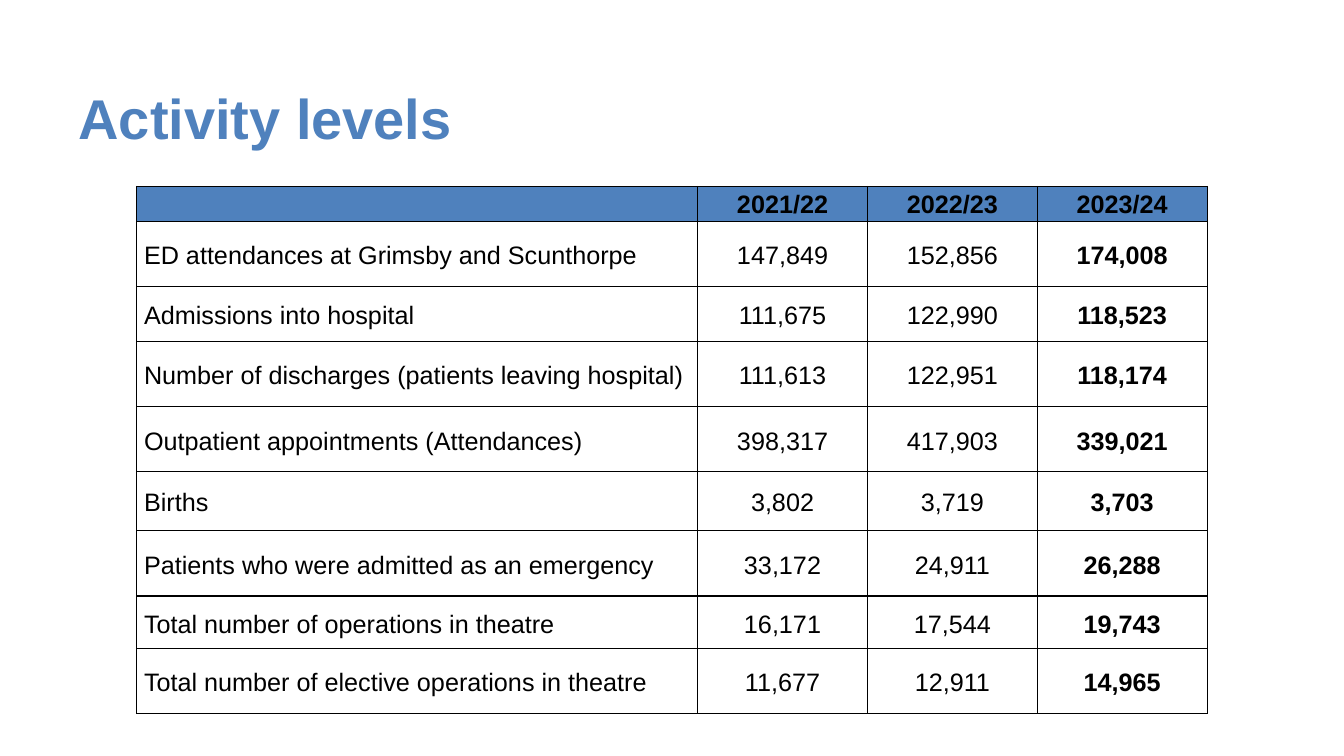
from lxml.etree import SubElement as Sub
from pptx import Presentation as Deck
from pptx.dml.color import RGBColor as RGB
from pptx.enum.text import MSO_ANCHOR as Anchor, PP_ALIGN as Align
from pptx.oxml.ns import qn
from pptx.util import Cm, Pt

BLUE = RGB(0x4F, 0x81, 0xBD)
BLACK = RGB(0, 0, 0)

HEAD = ["", "2021/22", "2022/23", "2023/24"]
ROWS = [
    ["ED attendances at Grimsby and Scunthorpe", "147,849", "152,856", "174,008"],
    ["Admissions into hospital", "111,675", "122,990", "118,523"],
    ["Number of discharges (patients leaving hospital)", "111,613", "122,951", "118,174"],
    ["Outpatient appointments (Attendances)", "398,317", "417,903", "339,021"],
    ["Births", "3,802", "3,719", "3,703"],
    ["Patients who were admitted as an emergency", "33,172", "24,911", "26,288"],
    ["Total number of operations in theatre", "16,171", "17,544", "19,743"],
    ["Total number of elective operations in theatre", "11,677", "12,911", "14,965"],
]
WIDTHS = [14.13, 4.28, 4.28, 4.28]
HEIGHTS = [0.8, 1.65, 1.37, 1.65, 1.64, 1.48, 1.65, 1.32, 1.65]


def write(frame, text, font="Arial", size=18, color=BLACK, bold=False,
          align=Align.LEFT, line=None, after=None):
    para = frame.paragraphs[0]
    para.alignment = align
    if line:
        para.line_spacing = line
    if after:
        para.space_after = Pt(after)
    run = para.add_run()
    run.text = text
    run.font.name = font
    run.font.size = Pt(size)
    run.font.bold = bold
    run.font.color.rgb = color


class Page:
    def __init__(self, slide, accent=BLUE, ink=BLACK):
        self.slide = slide
        self.accent = accent
        self.ink = ink

    def title(self, text, left, top, width, height):
        box = self.slide.shapes.add_textbox(Cm(left), Cm(top), Cm(width), Cm(height))
        frame = box.text_frame
        frame.word_wrap = True
        frame.vertical_anchor = Anchor.MIDDLE
        write(frame, text, size=40, color=self.accent, bold=True)

    def border(self, cell):
        props = cell._tc.get_or_add_tcPr()
        for side in ("lnL", "lnR", "lnT", "lnB"):
            edge = Sub(props, qn("a:" + side), w=str(Pt(1)))
            fill = Sub(edge, qn("a:solidFill"))
            Sub(fill, qn("a:srgbClr"), val=str(self.ink))

    def cell(self, cell, text, head, first, last):
        self.border(cell)
        cell.margin_left = cell.margin_right = Cm(0.18)
        cell.margin_top = cell.margin_bottom = 0
        cell.vertical_anchor = Anchor.TOP if head else Anchor.MIDDLE
        if head:
            cell.fill.solid()
            cell.fill.fore_color.rgb = self.accent
        else:
            cell.fill.background()
        write(cell.text_frame, text, color=self.ink, bold=head or last,
              align=Align.LEFT if first else Align.CENTER, line=1.15, after=10)

    def table(self, rows, left, top, widths, heights):
        frame = self.slide.shapes.add_table(
            len(rows), len(widths), Cm(left), Cm(top), Cm(sum(widths)), Cm(sum(heights)))
        table = frame.table
        table.horz_banding = False
        table.first_row = False
        for col, width in zip(table.columns, widths):
            col.width = Cm(width)
        for row, height in zip(table.rows, heights):
            row.height = Cm(height)
        for r, row in enumerate(rows):
            for c, text in enumerate(row):
                self.cell(table.cell(r, c), text, r == 0, c == 0, c == len(row) - 1)


def main():
    deck = Deck()
    deck.slide_width = Cm(33.87)
    deck.slide_height = Cm(19.05)
    page = Page(deck.slides.add_slide(deck.slide_layouts[6]))
    page.title("Activity levels", 1.73, 1.37, 30.48, 3.18)
    page.table([HEAD] + ROWS, 3.45, 4.7, WIDTHS, HEIGHTS)
    deck.save("out.pptx")


if __name__ == "__main__":
    main()
